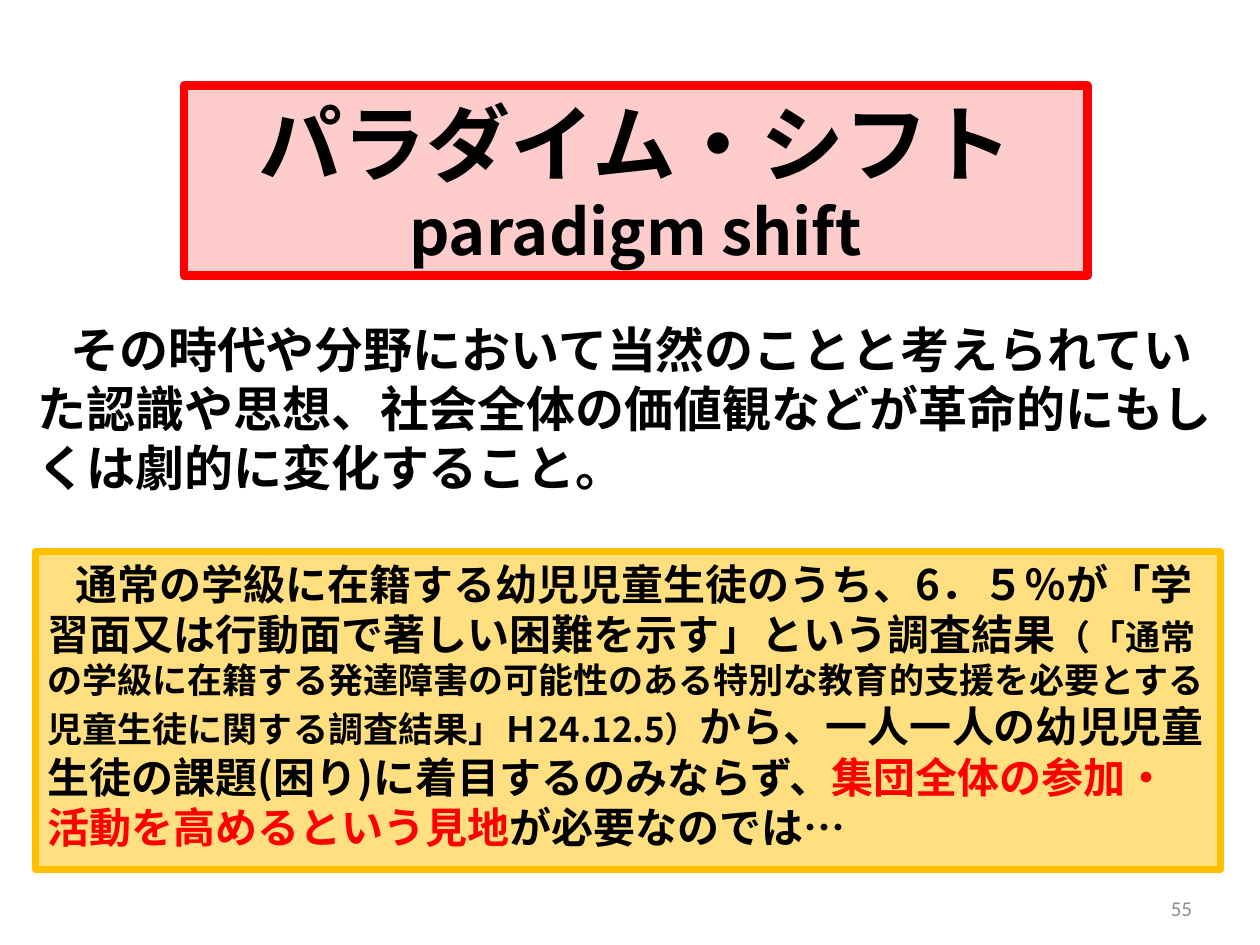
from lxml.etree import SubElement
from pptx import Presentation
from pptx.dml.color import RGBColor
from pptx.enum.shapes import MSO_SHAPE
from pptx.enum.text import MSO_ANCHOR, MSO_AUTO_SIZE, PP_ALIGN
from pptx.oxml.ns import qn
from pptx.util import Inches, Pt

RED, AMBER, BLACK, GREY = "FF0000", "FFC000", "000000", "8C8C8C"


def color(value):
    """Turn a hex string into a colour."""
    return RGBColor.from_string(value)


class SlideBuilder:
    """Hold the style and the current slide."""

    japanese = "Noto Sans CJK JP"
    latin = "Calibri"

    def __init__(self, slide):
        """Keep the slide to draw on."""
        self.slide = slide

    def place(self, shape, box):
        """Move a shape to left, top, width and height in inches."""
        for name, length in zip(("left", "top", "width", "height"), box):
            setattr(shape, name, Inches(length))

    def panel(self, shape, hue, opacity, weight):
        """Give a shape a translucent fill and an outline of one hue."""
        shape.fill.solid()
        shape.fill.fore_color.rgb = color(hue)
        tint = shape._element.spPr.find(qn("a:solidFill")).find(qn("a:srgbClr"))
        SubElement(tint, qn("a:alpha")).set("val", str(opacity * 1000))
        shape.line.color.rgb = color(hue)
        shape.line.width = Pt(weight)

    def fill_text(self, shape, runs, align=PP_ALIGN.LEFT, indent=0,
                  anchor=MSO_ANCHOR.TOP, font=japanese, bold=True):
        """Fill a shape with one paragraph of (text, size, hue) runs."""
        frame = shape.text_frame
        settings = {"word_wrap": True, "auto_size": MSO_AUTO_SIZE.NONE,
                    "vertical_anchor": anchor}
        for name, value in settings.items():
            setattr(frame, name, value)
        paragraph = frame.paragraphs[0]
        paragraph.alignment = align
        if indent:
            paragraph._p.get_or_add_pPr().set("indent", str(Inches(indent)))
        for text, size, hue in runs:
            run = paragraph.add_run()
            run.text = text
            run.font.color.rgb = color(hue)
            for name, value in {"name": font, "size": Pt(size), "bold": bold}.items():
                setattr(run.font, name, value)
            SubElement(run._r.get_or_add_rPr(), qn("a:ea")).set("typeface", font)

    def title(self, box, runs, hue, opacity, weight):
        """Format the title placeholder as a framed heading."""
        heading = self.slide.shapes.title
        self.place(heading, box)
        self.panel(heading, hue, opacity, weight)
        self.fill_text(heading, runs, PP_ALIGN.CENTER)

    def text(self, box, runs, **layout):
        """Add a plain text box."""
        self.fill_text(self.slide.shapes.add_textbox(*map(Inches, box)), runs, **layout)

    def callout(self, box, runs, hue, opacity, weight, **layout):
        """Add a framed rectangle with text."""
        frame = self.slide.shapes.add_shape(MSO_SHAPE.RECTANGLE, *map(Inches, box))
        frame.shadow.inherit = False
        self.panel(frame, hue, opacity, weight)
        self.fill_text(frame, runs, **layout)


def main():
    """Build and save the slide."""
    deck = Presentation()
    deck.slide_width, deck.slide_height = Inches(10), Inches(7.5)
    builder = SlideBuilder(deck.slides.add_slide(deck.slide_layouts[5]))

    definition = "その時代や分野において当然のことと考えられていた認識や思想、社会全体の価値観などが革命的にもしくは劇的に変化すること。"
    builder.text((0.2, 2.49, 9.57, 1.51), [(definition, 28, BLACK)], indent=0.26)

    heading = [("パラダイム・シフト ", 48, BLACK), ("paradigm shift", 36, BLACK)]
    builder.title((1.46, 0.68, 7.17, 1.51), heading, RED, 20, 5)

    survey = [
        ("通常の学級に在籍する幼児児童生徒のうち、6．５％が「学習面又は行動面で著しい困難を示す」という調査結果", 24, BLACK),
        ("（「通常の学級に在籍する発達障害の可能性のある特別な教育的支援を必要とする児童生徒に関する調査結果」Ｈ24.12.5）", 20, BLACK),
        ("から、一人一人の幼児児童生徒の課題(困り)に着目するのみならず、", 24, BLACK),
        ("集団全体の参加・活動を高めるという見地", 24, RED),
        ("が必要なのでは…", 24, BLACK),
    ]
    builder.callout((0.28, 4.38, 9.41, 2.52), survey, AMBER, 50, 4, indent=0.22)

    builder.text((7.03, 7.01, 2.53, 0.4), [("55", 12, GREY)], align=PP_ALIGN.RIGHT,
                 anchor=MSO_ANCHOR.MIDDLE, font=builder.latin, bold=False)
    deck.save("out.pptx")


if __name__ == "__main__":
    main()
